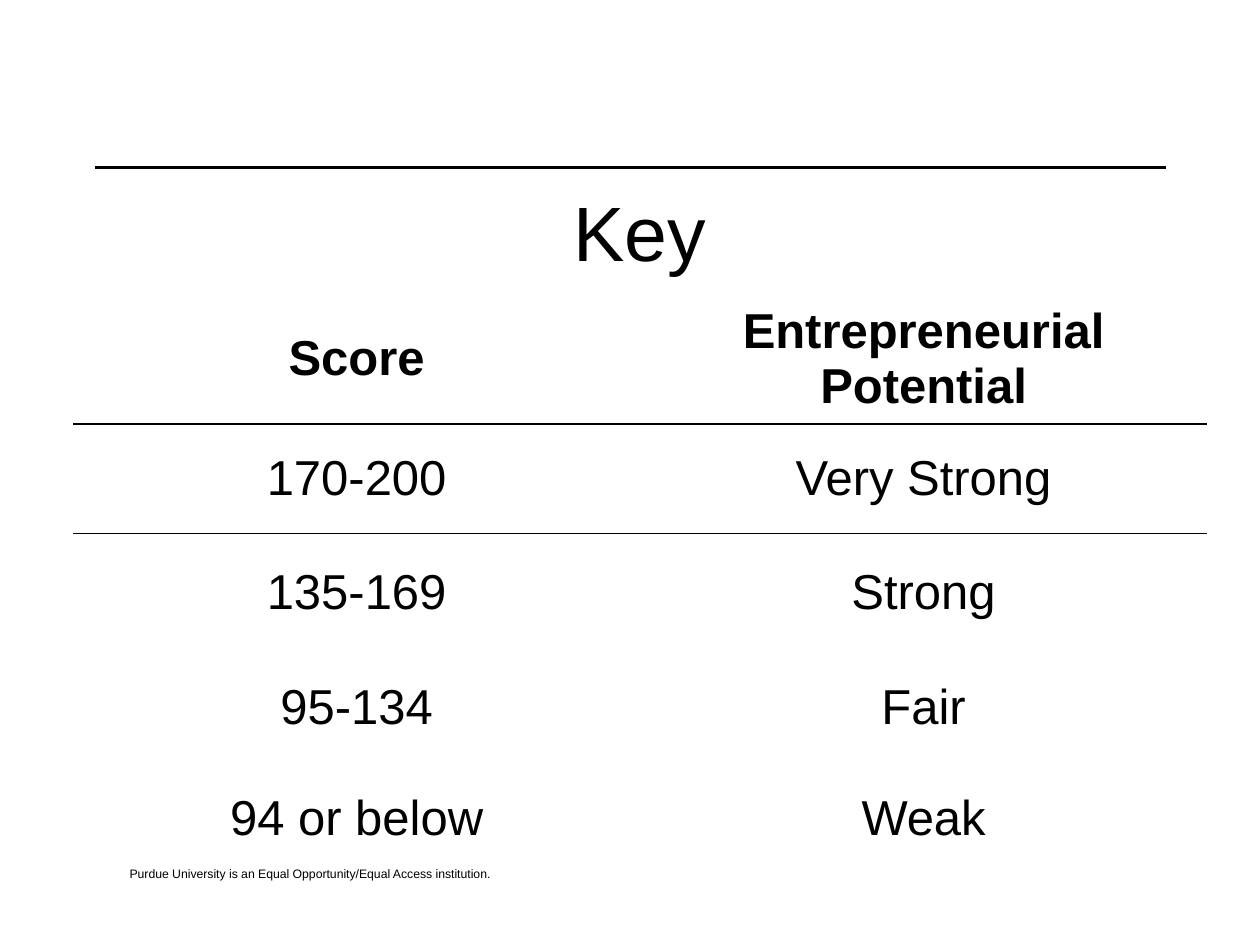
from lxml import etree
from pptx import Presentation
from pptx import util as u
from pptx.dml.color import RGBColor
from pptx.enum import shapes, text
from pptx.oxml.ns import qn

# Content
TITLE = "Key"
ROWS = [
    ("Score", "Entrepreneurial Potential"),
    ("170-200", "Very Strong"),
    ("135-169", "Strong"),
    ("95-134", "Fair"),
    ("94 or below", "Weak"),
]
FOOTER = "Purdue University is an Equal Opportunity/Equal Access institution."

# Theme and grid
THEME = dict(font="Arial", ink="000000", title=44, body=28, footer=7, rule=1.75, border=1)
W, H = 10, 7.5
MARGIN = 0.075 * W
TABLE_LEFT, TABLE_TOP, COL_W = 0.58, 0.2 * H, 0.45 * W
ROW_H = [0.83, 0.87, 0.87, 0.93, 0.9, 0.87]  # the first row is an empty merged band
NO_STYLE = "{2D5ABB26-0587-4C30-8999-92F81FD0307C}"


def write(tf, content, size, bold=False, anchor=text.MSO_ANCHOR.MIDDLE):
    tf.word_wrap = True
    tf.vertical_anchor = anchor
    p = tf.paragraphs[0]
    p.alignment = text.PP_ALIGN.CENTER
    r = p.add_run()
    r.text = content
    r.font.name, r.font.size, r.font.bold = THEME["font"], u.Pt(size), bold
    r.font.color.rgb = RGBColor.from_string(THEME["ink"])


def add_text(s, box, content, size, **fmt):
    sp = s.shapes.add_textbox(*(u.Inches(v) for v in box))
    write(sp.text_frame, content, size, **fmt)


def add_border(cell, side):
    ln = etree.Element(qn("a:" + side), w=str(u.Pt(THEME["border"])))
    fill = etree.SubElement(ln, qn("a:solidFill"))
    etree.SubElement(fill, qn("a:srgbClr"), val=THEME["ink"])
    cell._tc.get_or_add_tcPr().insert(0, ln)


prs = Presentation()
prs.slide_width, prs.slide_height = u.Inches(W), u.Inches(H)
s = prs.slides.add_slide(prs.slide_layouts[6])

# Rule under the header area
y = u.Inches(1.33)
rule = s.shapes.add_connector(
    shapes.MSO_CONNECTOR.STRAIGHT, u.Inches(MARGIN), y, u.Inches(W - MARGIN), y)
rule.line.color.rgb = RGBColor.from_string(THEME["ink"])
rule.line.width = u.Pt(THEME["rule"])
etree.SubElement(rule._element.spPr, qn("a:effectLst"))

# Footer and title
add_text(s, (MARGIN, 6.83, 3.42, 0.5), FOOTER, THEME["footer"], anchor=text.MSO_ANCHOR.TOP)
add_text(s, (0.83, 1.42, 8.5, 0.83), TITLE, THEME["title"])

# Score table
frame = s.shapes.add_table(
    len(ROW_H), 2, u.Inches(TABLE_LEFT), u.Inches(TABLE_TOP),
    u.Inches(2 * COL_W), u.Inches(sum(ROW_H)))
table = frame.table
table.first_row = table.horz_banding = False
table._tbl.tblPr.find(qn("a:tableStyleId")).text = NO_STYLE
for col in table.columns:
    col.width = u.Inches(COL_W)
for row, height in zip(table.rows, ROW_H):
    row.height = u.Inches(height)
for cell in table.iter_cells():
    cell.fill.background()
table.cell(0, 0).merge(table.cell(0, 1))

for i, values in enumerate(ROWS, start=1):
    for j, value in enumerate(values):
        cell = table.cell(i, j)
        cell.vertical_anchor = text.MSO_ANCHOR.MIDDLE
        write(cell.text_frame, value, THEME["body"], bold=i == 1)
        if i <= 2:  # line between the header row and the scores
            add_border(cell, "lnB" if i == 1 else "lnT")

prs.save("out.pptx")
